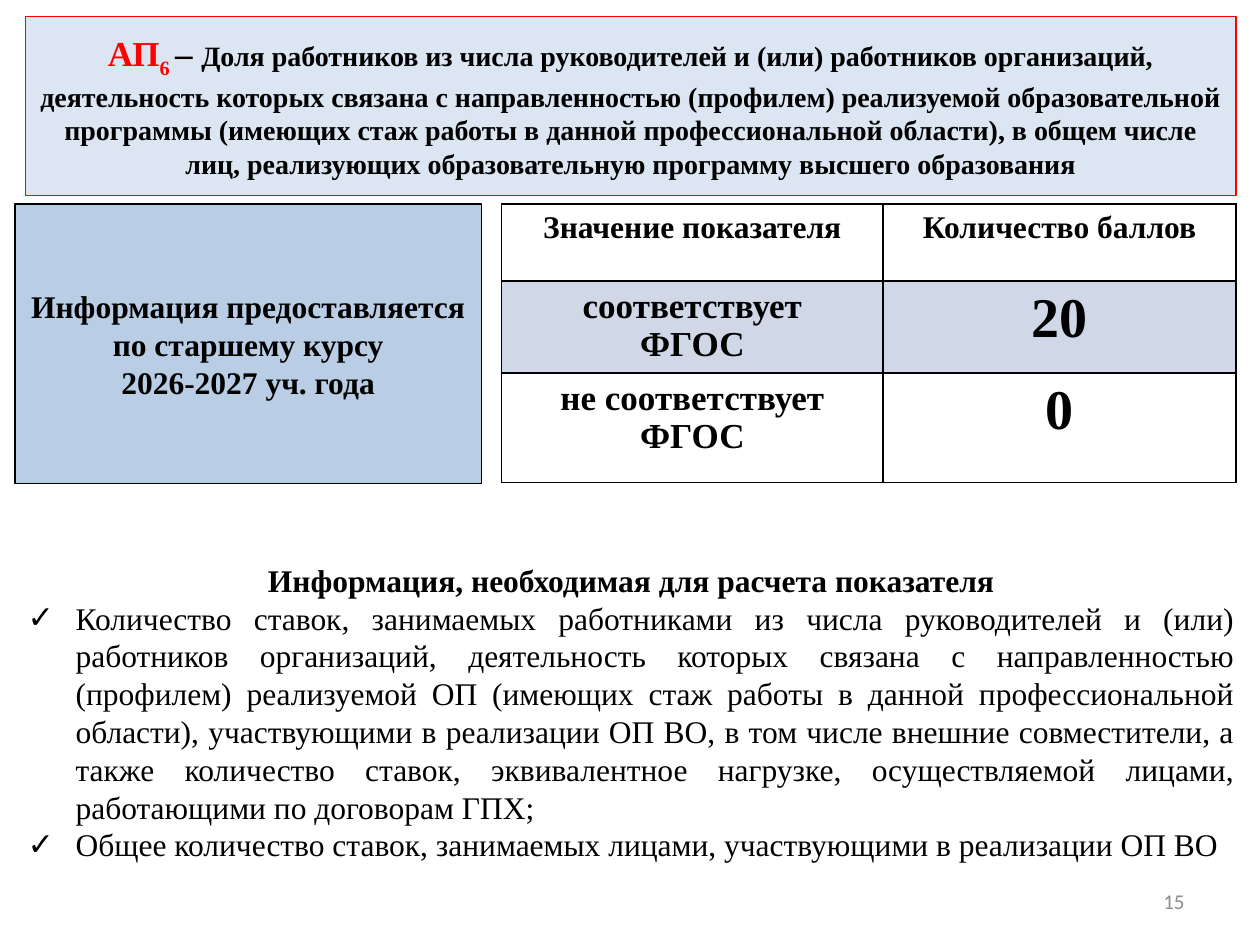
from lxml.etree import SubElement
from pptx import Presentation
from pptx.dml.color import RGBColor
from pptx.enum.shapes import MSO_SHAPE
from pptx.enum.text import MSO_ANCHOR, MSO_AUTO_SIZE, PP_ALIGN
from pptx.oxml.ns import qn
from pptx.util import Inches, Pt

BLACK = RGBColor(0x00, 0x00, 0x00)
WHITE = RGBColor(0xFF, 0xFF, 0xFF)
RED = RGBColor(0xFF, 0x00, 0x00)
GRAY = RGBColor(0x8C, 0x8C, 0x8C)
TITLE_FILL = RGBColor(0xDC, 0xE6, 0xF2)
NOTE_FILL = RGBColor(0xB9, 0xCD, 0xE5)
ROW_FILL = RGBColor(0xD0, 0xD8, 0xE8)

TITLE_RUNS = [
    ("АП", 20, RED, False),
    ("6 ", 20, RED, True),
    ("– ", 20, BLACK, False),
    ("Доля работников из числа руководителей и (или) работников организаций, "
     "деятельность которых связана с направленностью (профилем) реализуемой "
     "образовательной программы (имеющих стаж работы в данной профессиональной "
     "области), в общем числе лиц, реализующих образовательную программу "
     "высшего образования", 16, BLACK, False),
]
NOTE_LINES = ["Информация предоставляется по старшему курсу", "2026-2027 уч. года"]
SCORE_ROWS = [
    (0.61, WHITE, [(["Значение показателя"], 18, None), (["Количество баллов"], 18, None)]),
    (0.73, ROW_FILL, [(["соответствует", "ФГОС"], 20, 22), (["20"], 32, None)]),
    (0.87, WHITE, [(["не соответствует", "ФГОС"], 20, 22), (["0"], 32, None)]),
]
DATA_HEADING = "Информация, необходимая для расчета показателя"
DATA_ITEMS = [
    "Количество ставок, занимаемых работниками из числа руководителей и (или) "
    "работников организаций, деятельность которых связана с направленностью "
    "(профилем) реализуемой ОП (имеющих стаж работы в данной профессиональной "
    "области), участвующими в реализации ОП ВО, в том числе внешние "
    "совместители, а также количество ставок, эквивалентное нагрузке, "
    "осуществляемой лицами, работающими по договорам ГПХ;",
    "Общее количество ставок, занимаемых лицами, участвующими в реализации ОП ВО",
]


class SlideBuilder:
    font_name = "Times New Roman"
    text_size = 18
    text_leading = 21.6

    def __init__(self, slide):
        self.slide = slide

    def place(self, shape, left, top, width, height):
        shape.left, shape.top = Inches(left), Inches(top)
        shape.width, shape.height = Inches(width), Inches(height)

    def paint(self, shape, fill, line):
        shape.fill.solid()
        shape.fill.fore_color.rgb = fill
        shape.line.color.rgb = line
        shape.line.width = Pt(0.75)

    def add_run(self, paragraph, text, size, color=BLACK, bold=True, font_name=None):
        run = paragraph.add_run()
        run.text = text
        run.font.name = font_name or self.font_name
        run.font.size = Pt(size)
        run.font.bold = bold
        run.font.color.rgb = color
        return run

    def next_paragraph(self, frame, index, alignment=PP_ALIGN.CENTER, leading=None):
        paragraph = frame.add_paragraph() if index else frame.paragraphs[0]
        paragraph.alignment = alignment
        paragraph.space_before = Pt(0)
        if leading:
            paragraph.line_spacing = Pt(leading)
        return paragraph

    def add_lines(self, frame, lines, size, leading=None):
        for index, line in enumerate(lines):
            self.add_run(self.next_paragraph(frame, index, leading=leading), line, size)

    def add_title(self, runs, *box):
        title = self.slide.shapes.title
        self.place(title, *box)
        self.paint(title, TITLE_FILL, RED)
        frame = title.text_frame
        frame.auto_size = MSO_AUTO_SIZE.NONE
        frame.vertical_anchor = MSO_ANCHOR.MIDDLE
        paragraph = self.next_paragraph(frame, 0)
        for text, size, color, lowered in runs:
            run = self.add_run(paragraph, text, size, color)
            if lowered:
                run.font._element.set("baseline", "-25000")

    def add_note(self, lines, *box):
        shape = self.slide.shapes.add_shape(MSO_SHAPE.RECTANGLE, *map(Inches, box))
        shape.shadow.inherit = False
        self.paint(shape, NOTE_FILL, BLACK)
        frame = shape.text_frame
        frame.word_wrap = True
        frame.vertical_anchor = MSO_ANCHOR.MIDDLE
        self.add_lines(frame, lines, self.text_size, self.text_leading)

    def add_bullet(self, paragraph):
        properties = paragraph._p.get_or_add_pPr()
        properties.set("marL", str(Inches(0.38)))
        properties.set("indent", str(Inches(-0.38)))
        SubElement(properties, qn("a:buChar"), char="✓")

    def add_list(self, heading, items, *box):
        body = self.slide.placeholders[1]
        self.place(body, *box)
        frame = body.text_frame
        frame.auto_size = MSO_AUTO_SIZE.NONE
        paragraph = self.next_paragraph(frame, 0, leading=self.text_leading)
        properties = paragraph._p.get_or_add_pPr()
        properties.set("marL", "0")
        properties.set("indent", "0")
        SubElement(properties, qn("a:buNone"))
        self.add_run(paragraph, heading, self.text_size)
        for index, item in enumerate(items, 1):
            paragraph = self.next_paragraph(frame, index, PP_ALIGN.JUSTIFY, self.text_leading)
            self.add_bullet(paragraph)
            self.add_run(paragraph, item, self.text_size, bold=False)

    def add_borders(self, cell):
        properties = cell._tc.get_or_add_tcPr()
        for side in ("a:lnL", "a:lnR", "a:lnT", "a:lnB"):
            border = SubElement(properties, qn(side), w=str(Pt(1)))
            fill = SubElement(border, qn("a:solidFill"))
            SubElement(fill, qn("a:srgbClr"), val=str(BLACK))

    def add_table(self, rows, column_widths, left, top):
        width, height = sum(column_widths), sum(row[0] for row in rows)
        table = self.slide.shapes.add_table(
            len(rows), len(column_widths), *map(Inches, (left, top, width, height))).table
        for column, column_width in zip(table.columns, column_widths):
            column.width = Inches(column_width)
        for row, (row_height, fill, contents) in zip(table.rows, rows):
            row.height = Inches(row_height)
            for cell, (lines, size, leading) in zip(row.cells, contents):
                self.add_borders(cell)
                cell.fill.solid()
                cell.fill.fore_color.rgb = fill
                self.add_lines(cell.text_frame, lines, size, leading)

    def add_page_number(self, number, *box):
        frame = self.slide.shapes.add_textbox(*map(Inches, box)).text_frame
        frame.word_wrap = True
        frame.vertical_anchor = MSO_ANCHOR.MIDDLE
        paragraph = self.next_paragraph(frame, 0, PP_ALIGN.RIGHT)
        self.add_run(paragraph, number, 12, GRAY, False, "Calibri")


def main():
    presentation = Presentation()
    presentation.slide_width = Inches(10)
    presentation.slide_height = Inches(7.5)
    builder = SlideBuilder(presentation.slides.add_slide(presentation.slide_layouts[1]))
    builder.add_title(TITLE_RUNS, 0.2, 0.13, 9.61, 1.42)
    builder.add_note(NOTE_LINES, 0.12, 1.62, 3.7, 2.22)
    builder.add_table(SCORE_ROWS, [3.03, 2.8], 3.98, 1.62)
    builder.add_list(DATA_HEADING, DATA_ITEMS, 0.12, 4.4, 9.78, 2.52)
    builder.add_page_number("15", 7.17, 6.95, 2.33, 0.4)
    presentation.save("out.pptx")


if __name__ == "__main__":
    main()
